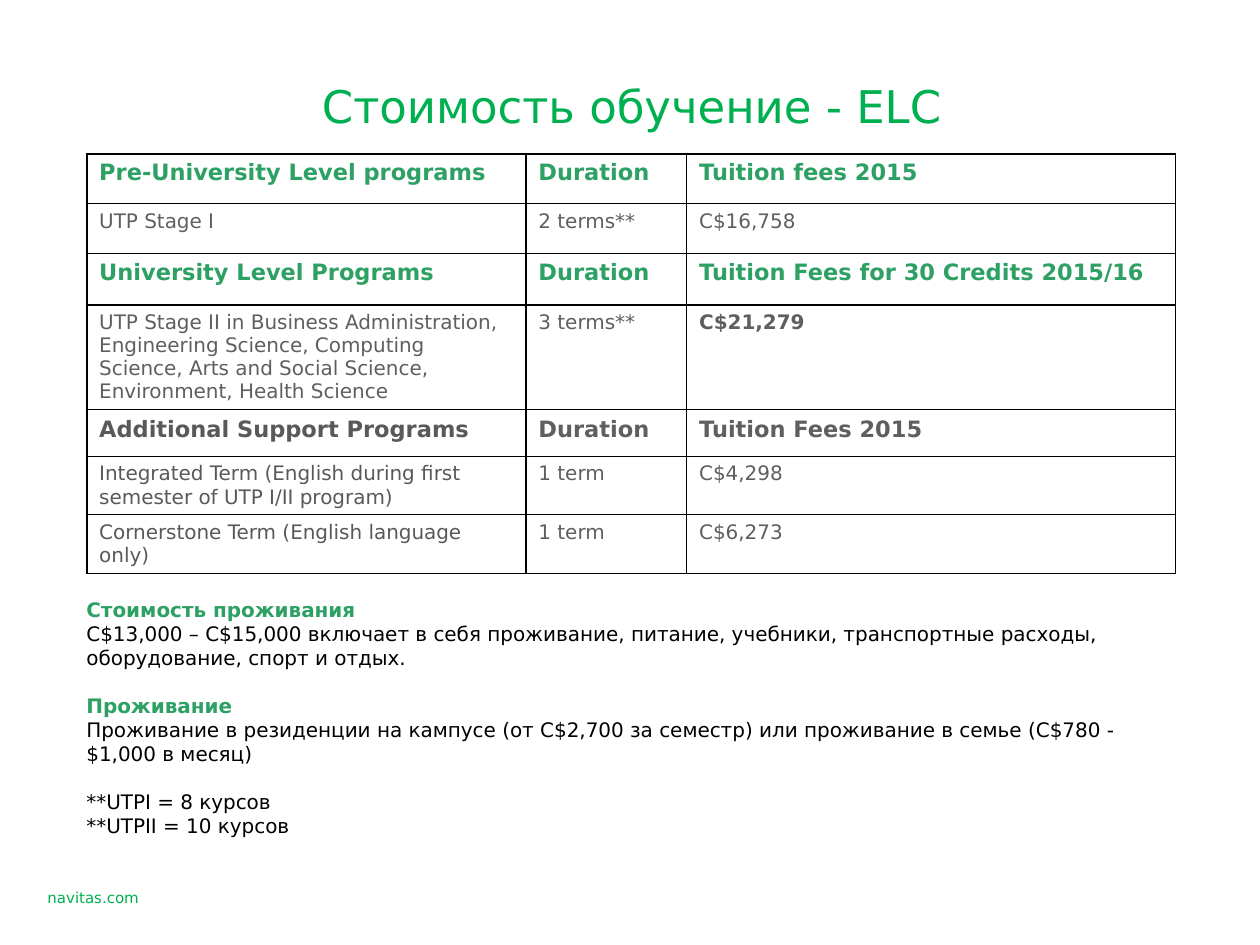
from lxml.etree import SubElement
from pptx import Presentation
from pptx.dml.color import RGBColor
from pptx.enum.text import MSO_ANCHOR as Anchor, PP_ALIGN as Align
from pptx.oxml.ns import qn
from pptx.util import Pt

FONT = "DejaVu Sans"
BRIGHT_GREEN = RGBColor(0x00, 0xB0, 0x50)
GREEN = RGBColor(0x2D, 0xA0, 0x64)
GRAY = RGBColor(0x5F, 0x5F, 0x5F)
DARK_GRAY = RGBColor(0x59, 0x59, 0x59)
BLACK = RGBColor(0x00, 0x00, 0x00)

# Content
TITLE = "Стоимость обучение - ELC"
FOOTER = "navitas.com"

# Row height, kind of row, cells
FEES = [
    (40, "header", ["Pre-University Level programs", "Duration", "Tuition fees 2015"]),
    (40, "program", ["UTP Stage I", "2 terms**", "C$16,758"]),
    (41, "header", ["University Level Programs", "Duration",
                    "Tuition Fees for 30 Credits 2015/16"]),
    (84, "program", ["UTP Stage II in Business Administration, Engineering Science, "
                     "Computing Science, Arts and Social Science, Environment, "
                     "Health Science", "3 terms**", "C$21,279"]),
    (37, "support header", ["Additional Support Programs", "Duration",
                            "Tuition Fees 2015"]),
    (47, "support", ["Integrated Term (English during first semester of "
                     "UTP I/II program)", "1 term", "C$4,298"]),
    (47, "support", ["Cornerstone Term (English language only)", "1 term", "C$6,273"]),
]
BOLD_FEE = "C$21,279"
COLUMN_WIDTHS = [351.4, 128.6, 391]

# Size, bold, colour of the first column, colour of the other columns
ROW_STYLES = {
    "header": (18, True, GREEN, GREEN),
    "program": (16, False, GRAY, GRAY),
    "support header": (18, True, DARK_GRAY, GRAY),
    "support": (16, False, DARK_GRAY, GRAY),
}

# Each group: heading (or None) and its lines
NOTES = [
    ("Стоимость проживания",
     ["C$13,000 – C$15,000 включает в себя проживание, питание, учебники, "
      "транспортные расходы, оборудование, спорт и отдых."]),
    ("Проживание",
     ["Проживание в резиденции на кампусе (от C$2,700 за семестр) или "
      "проживание в семье (C$780 - $1,000 в месяц)"]),
    (None, ["**UTPI = 8 курсов", "**UTPII = 10 курсов"]),
]
NOTE_LINE = 19.2

WIDE_MARGINS = {"margin_left": Pt(10), "margin_right": Pt(10),
                "margin_top": Pt(5), "margin_bottom": Pt(5)}


def set_format(target, values):
    for name, value in values.items():
        setattr(target, name, value)


def write(paragraph, text, size, color, bold=False):
    run = paragraph.add_run()
    run.text = text
    set_format(run.font, {"name": FONT, "size": Pt(size), "bold": bold})
    run.font.color.rgb = color


def add_border(cell, side, width):
    line = SubElement(cell._tc.get_or_add_tcPr(), qn(f"a:ln{side}"), w=str(Pt(width)))
    fill = SubElement(line, qn("a:solidFill"))
    SubElement(fill, qn("a:srgbClr"), val=str(BLACK))


presentation = Presentation()
set_format(presentation, {"slide_width": Pt(1008), "slide_height": Pt(756)})
slide = presentation.slides.add_slide(presentation.slide_layouts[5])

# Title
title = slide.shapes.title
set_format(title, {"left": Pt(52), "top": Pt(53), "width": Pt(907), "height": Pt(63)})
set_format(title.text_frame, {**WIDE_MARGINS, "vertical_anchor": Anchor.MIDDLE,
                              "word_wrap": True})
title_paragraph = title.text_frame.paragraphs[0]
title_paragraph.alignment = Align.CENTER
write(title_paragraph, TITLE, 36, BRIGHT_GREEN)

# Fees table
table = slide.shapes.add_table(
    len(FEES), len(COLUMN_WIDTHS), Pt(69.4), Pt(123),
    Pt(sum(COLUMN_WIDTHS)), Pt(sum(height for height, _, _ in FEES))).table
set_format(table, {"first_row": False, "horz_banding": False})
for column, width in zip(table.columns, COLUMN_WIDTHS):
    column.width = Pt(width)
for row_index, (height, kind, texts) in enumerate(FEES):
    table.rows[row_index].height = Pt(height)
    size, bold, first_color, other_color = ROW_STYLES[kind]
    for column_index, text in enumerate(texts):
        cell = table.cell(row_index, column_index)
        set_format(cell, {**WIDE_MARGINS, "vertical_anchor": Anchor.TOP})
        write(cell.text_frame.paragraphs[0], text, size,
              other_color if column_index else first_color,
              bold or text == BOLD_FEE)
        add_border(cell, "L", 1 if column_index else 2.25)
        add_border(cell, "R", 1)
        add_border(cell, "T", 1 if row_index else 2.25)
        add_border(cell, "B", 1)
        cell.fill.background()

# Living costs and notes
notes = slide.shapes.add_textbox(Pt(62), Pt(474.5), Pt(879), Pt(220)).text_frame
notes.word_wrap = True
paragraph = notes.paragraphs[0]
for group_index, (heading, lines) in enumerate(NOTES):
    entries = [(heading, GREEN, True)] if heading else []
    entries += [(line, BLACK, False) for line in lines]
    for entry_index, (text, color, bold) in enumerate(entries):
        if group_index or entry_index:
            paragraph = notes.add_paragraph()
        if group_index and not entry_index:
            paragraph.space_before = Pt(NOTE_LINE)
        paragraph.line_spacing = Pt(NOTE_LINE)
        write(paragraph, text, 16, color, bold)

# Footer
footer = slide.shapes.add_textbox(Pt(28), Pt(698), Pt(235), Pt(40)).text_frame
set_format(footer, {**WIDE_MARGINS, "vertical_anchor": Anchor.MIDDLE, "word_wrap": True})
write(footer.paragraphs[0], FOOTER, 12, BRIGHT_GREEN)

presentation.save("out.pptx")
